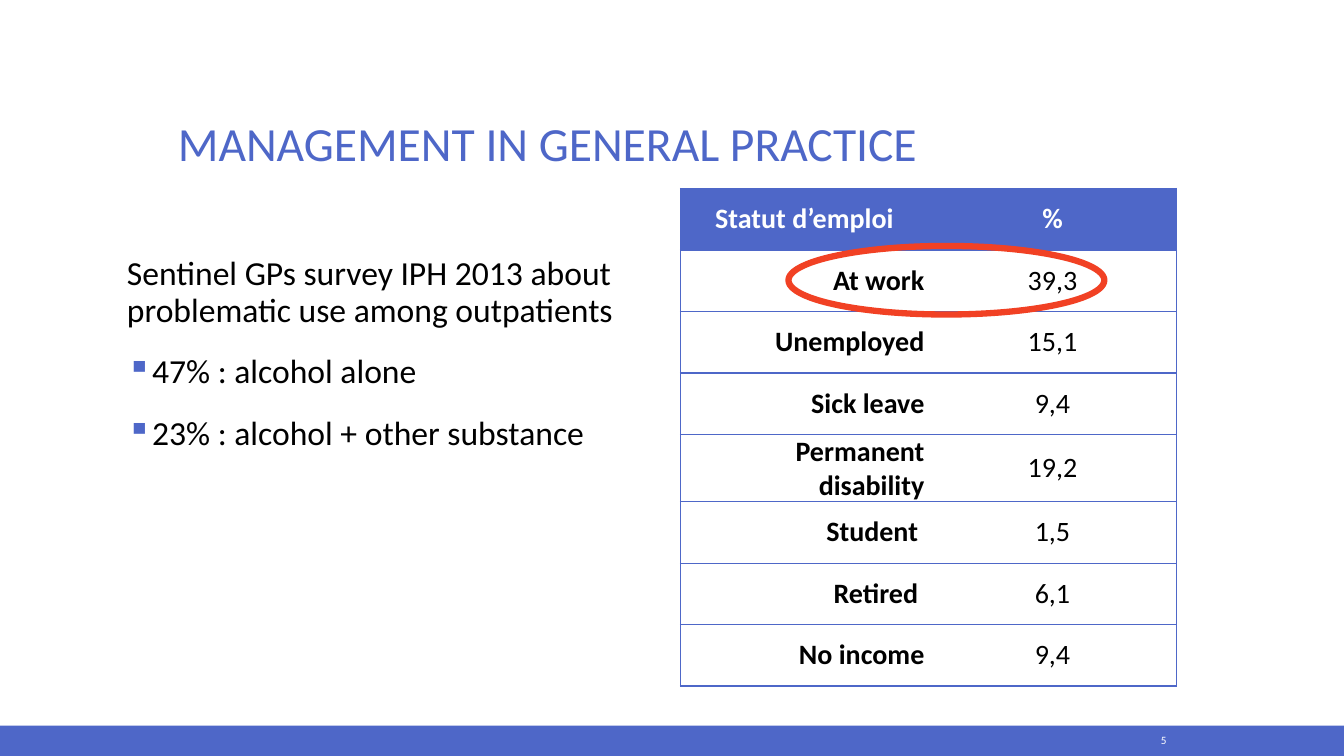
from lxml.etree import SubElement as Sub
from pptx import Presentation
from pptx.dml.color import RGBColor as Rgb
from pptx.enum.shapes import MSO_SHAPE as Kind
from pptx.enum.text import MSO_ANCHOR as Anchor, PP_ALIGN as Align
from pptx.oxml import parse_xml
from pptx.oxml.ns import nsdecls, qn
from pptx.util import Inches, Pt

WIDE, HIGH = Inches(13.33), Inches(7.5)
COLS, ROWS = 120, 75
FONT = "Calibri"
BLUE, RED, BLACK, WHITE = "4E67C8", "F14124", "000000", "FFFFFF"

INTRO = "Sentinel GPs survey IPH 2013 about problematic use among outpatients"
POINTS = ["47% : alcohol alone", "23% : alcohol + other substance"]
JOBS = [
    ("Statut d’emploi", "%"),
    ("At work", "39,3"),
    ("Unemployed", "15,1"),
    ("Sick leave", "9,4"),
    ("Permanent disability", "19,2"),
    ("Student ", "1,5"),
    ("Retired ", "6,1"),
    ("No income", "9,4"),
]


def hue(code):
    return Rgb.from_string(code)


def grid(col, row, cols, rows):
    """Turn grid columns and rows into left, top, width, height."""
    return (int(WIDE * col / COLS), int(HIGH * row / ROWS),
            int(WIDE * cols / COLS), int(HIGH * rows / ROWS))


def write(para, text, size, color, bold=False):
    run = para.add_run()
    run.text = text
    font = run.font
    font.name, font.size, font.bold = FONT, Pt(size), bold
    font.color.rgb = hue(color)


def indent(para, left, first=0):
    props = para._p.get_or_add_pPr()
    props.set("marL", str(Inches(left)))
    props.set("indent", str(Inches(first)))
    return props


def box(slide, area, anchor):
    frame = slide.shapes.add_textbox(*grid(*area)).text_frame
    frame.word_wrap = True
    frame.vertical_anchor = anchor
    return frame


def form(slide, kind, area, fill=None, line=None, width=0):
    item = slide.shapes.add_shape(kind, *grid(*area))
    item.shadow.inherit = False
    if fill:
        item.fill.solid()
        item.fill.fore_color.rgb = hue(fill)
    else:
        item.fill.background()
    if line:
        item.line.color.rgb = hue(line)
        item.line.width = Pt(width)
    else:
        item.line.fill.background()


def survey(slide, area):
    frame = box(slide, area, Anchor.TOP)
    for num, text in enumerate([INTRO] + POINTS):
        para = frame.paragraphs[0] if num == 0 else frame.add_paragraph()
        para.line_spacing = 0.9
        para.space_before = Pt(18 if num else 0)
        write(para, text, 24, BLACK)
        if num == 0:
            indent(para, 0.05)
            continue
        # Square blue bullet
        props = indent(para, 0.3, -0.25)
        tint = Sub(props, qn("a:buClr"))
        Sub(tint, qn("a:srgbClr")).set("val", BLUE)
        Sub(props, qn("a:buChar")).set("char", "▪")


def edges(cell, inner):
    """Draw all sides of a cell in blue, except the inner one."""
    props = cell._tc.get_or_add_tcPr()
    for spot, side in enumerate(("lnL", "lnR", "lnT", "lnB")):
        ink = "<a:noFill/>" if side == inner else (
            f'<a:solidFill><a:srgbClr val="{BLUE}"/></a:solidFill>')
        props.insert(spot, parse_xml(
            f'<a:{side} {nsdecls("a")} w="{Pt(1)}">{ink}</a:{side}>'))


def fill_cell(cell, text, row, col):
    head = row == 0
    cell.margin_left = cell.margin_right = Inches(0.04)
    cell.margin_top = cell.margin_bottom = 0
    cell.vertical_anchor = Anchor.MIDDLE
    cell.fill.solid()
    cell.fill.fore_color.rgb = hue(BLUE if head else WHITE)
    para = cell.text_frame.paragraphs[0]
    para.alignment = Align.CENTER if head or col else Align.RIGHT
    if row > 1 and col == 0:
        indent(para, 0.12)
    write(para, text, 20, WHITE if head else BLACK, head or col == 0)
    edges(cell, "lnL" if col else "lnR")


def job_table(slide, area, data):
    table = slide.shapes.add_table(len(data), 2, *grid(*area)).table
    table.first_row = table.horz_banding = False
    for row, texts in enumerate(data):
        table.rows[row].height = int(HIGH * 6.1 / ROWS)
        for col, text in enumerate(texts):
            fill_cell(table.cell(row, col), text, row, col)


def main():
    deck = Presentation()
    deck.slide_width, deck.slide_height = WIDE, HIGH
    slide = deck.slides.add_slide(deck.slide_layouts[6])

    # Footer band
    form(slide, Kind.RECTANGLE, (0, 72, COLS, 3), fill=BLUE)

    # Title
    para = box(slide, (15, 5, 90, 12.5), Anchor.BOTTOM).paragraphs[0]
    para.line_spacing = 0.9
    write(para, "MANAGEMENT IN GENERAL PRACTICE", 34, BLUE)

    # Survey text and table
    survey(slide, (10, 25, 49.2, 42.6))
    job_table(slide, (60.75, 18.7, 44.3, 48.8), JOBS)

    # Slide number
    para = box(slide, (97.4, 72.2, 7.65, 2.5), Anchor.MIDDLE).paragraphs[0]
    para.alignment = Align.RIGHT
    write(para, "5", 8, WHITE)

    # Ring around the first value
    form(slide, Kind.OVAL, (70.4, 24.4, 28.2, 6.8), line=RED, width=4.5)

    deck.save("out.pptx")


if __name__ == "__main__":
    main()
